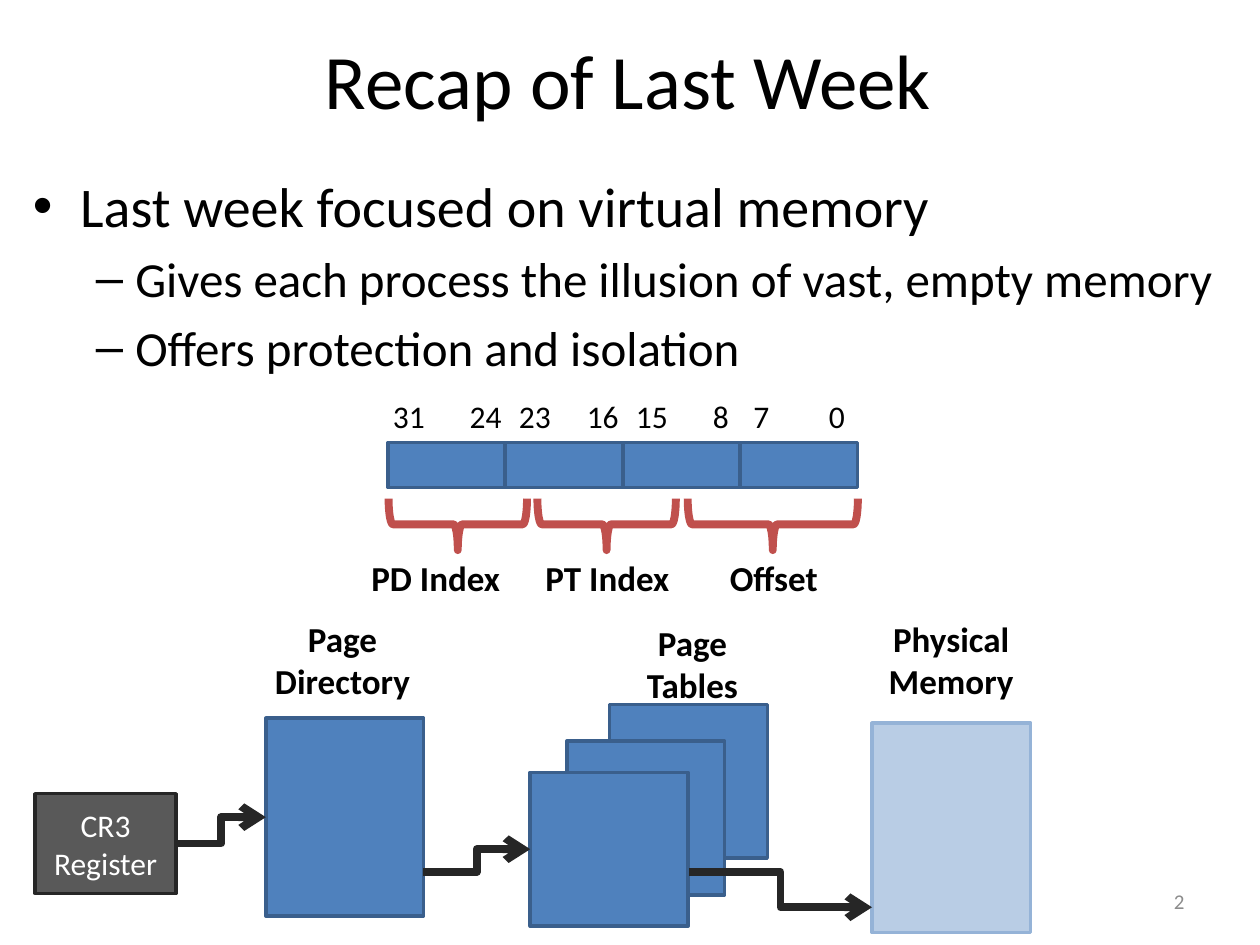
from lxml.etree import SubElement
from pptx import Presentation
from pptx.dml.color import RGBColor
from pptx.enum.shapes import MSO_CONNECTOR, MSO_SHAPE
from pptx.enum.text import MSO_ANCHOR, MSO_AUTO_SIZE, PP_ALIGN
from pptx.oxml.ns import qn
from pptx.util import Cm, Pt

color = RGBColor.from_string
BLUE, DARK_BLUE, CHARCOAL = "4F81BD", "3A5F8C", "262626"

deck = Presentation()
deck.slide_width, deck.slide_height = Cm(25.4), Cm(19.05)
slide = deck.slides.add_slide(deck.slide_layouts[1])
shapes = slide.shapes


def write(frame, lines, size, ink="000000", bold=False, align=PP_ALIGN.CENTER):
    """Put each line in its own paragraph."""
    for number, line in enumerate(lines):
        paragraph = frame.add_paragraph() if number else frame.paragraphs[0]
        paragraph.alignment = align
        run = paragraph.add_run()
        run.text = line
        run.font.name, run.font.size, run.font.bold = "Calibri", Pt(size), bold
        run.font.color.rgb = color(ink)


def add_block(kind, left, top, width, height, fill, line, weight=2):
    block = shapes.add_shape(kind, Cm(left), Cm(top), Cm(width), Cm(height))
    block.shadow.inherit = False
    if fill:
        block.fill.solid()
        block.fill.fore_color.rgb = color(fill)
    else:
        block.fill.background()
    block.line.color.rgb = color(line)
    block.line.width = Pt(weight)
    return block


# Title
title = shapes.title
title.left, title.top, title.width, title.height = Cm(0.13), Cm(0), Cm(25.07), Cm(3.18)
title.text_frame.vertical_anchor = MSO_ANCHOR.MIDDLE
write(title.text_frame, ["Recap of Last Week"], 44)

# Bullet list
recap = slide.placeholders[1]
recap.left, recap.top, recap.width, recap.height = Cm(0.41), Cm(3.33), Cm(24.46), Cm(5.28)
recap.text_frame.auto_size = MSO_AUTO_SIZE.NONE
points = [
    ("Last week focused on virtual memory", 0, 32),
    ("Gives each process the illusion of vast, empty memory", 1, 28),
    ("Offers protection and isolation", 1, 28),
]
for number, (point, level, size) in enumerate(points):
    paragraph = recap.text_frame.add_paragraph() if number else recap.text_frame.paragraphs[0]
    paragraph.level = level
    run = paragraph.add_run()
    run.text = point
    run.font.name, run.font.size = "Calibri", Pt(size)
    run.font.color.rgb = color("000000")

# Slide number
page_number = shapes.add_textbox(Cm(18.21), Cm(17.65), Cm(5.92), Cm(1.02))
page_number.text_frame.word_wrap = True
page_number.text_frame.vertical_anchor = MSO_ANCHOR.MIDDLE
write(page_number.text_frame, ["2"], 12, "8C8C8C", align=PP_ALIGN.RIGHT)

# Page directory, stacked page tables, physical memory and register
directory = add_block(MSO_SHAPE.RECTANGLE, 5.36, 14.48, 3.18, 3.99, BLUE, DARK_BLUE)
for left, top in [(12.29, 14.2), (11.43, 14.94), (10.69, 15.57)]:
    front_table = add_block(MSO_SHAPE.RECTANGLE, left, top, 3.18, 3.1, BLUE, DARK_BLUE)
add_block(MSO_SHAPE.RECTANGLE, 17.58, 14.58, 3.2, 4.22, "B9CDE5", "95B3D7")
register = add_block(MSO_SHAPE.FLOWCHART_PROCESS, 0.71, 16, 2.84, 2.01, "595959", CHARCOAL)
register.text_frame.vertical_anchor = MSO_ANCHOR.MIDDLE
write(register.text_frame, ["CR3", "Register"], 18, "FFFFFF")

# Arrows along the lookup path
RIGHT_SIDE, LEFT_SIDE = 3, 1
lookups = [
    (3.54, 17, 5.36, 16.48, register, directory),
    (8.53, 17.58, 10.69, 17.12, None, front_table),
    (13.89, 17.58, 17.58, 18.29, None, None),
]
for x1, y1, x2, y2, source, target in lookups:
    arrow = shapes.add_connector(MSO_CONNECTOR.ELBOW, Cm(x1), Cm(y1), Cm(x2), Cm(y2))
    if source:
        arrow.begin_connect(source, RIGHT_SIDE)
    if target:
        arrow.end_connect(target, LEFT_SIDE)
    arrow.line.color.rgb = color(CHARCOAL)
    arrow.line.width = Pt(4.5)
    SubElement(arrow.line._get_or_add_ln(), qn("a:tailEnd"), type="arrow")
    SubElement(arrow._element.spPr, qn("a:effectLst"))

# Four bytes of the virtual address
for byte in range(4):
    add_block(MSO_SHAPE.FLOWCHART_PROCESS, 7.82 + 2.37 * byte, 8.92, 2.36, 0.91, BLUE, DARK_BLUE)

# Bit numbers above the bytes
bit_lefts = {"31": 7.67, "24": 9.22, "23": 10.21, "16": 11.58,
             "15": 12.57, "8": 14.12, "7": 14.94, "0": 16.46}
for bit, left in bit_lefts.items():
    width = 1.17 if len(bit) == 2 else 0.84
    bit_label = shapes.add_textbox(Cm(left), Cm(7.87), Cm(width), Cm(1.02))
    bit_label.text_frame.word_wrap = False
    write(bit_label.text_frame, [bit], 18, align=PP_ALIGN.LEFT)

# Braces under the address fields, each turned to open upwards
BRACE_DEPTH, BRACE_MIDDLE = 1.04, 10.57
for center, span in [(9.23, 2.79), (12.23, 2.79), (15.58, 3.43)]:
    brace = add_block(MSO_SHAPE.LEFT_BRACE, center - BRACE_DEPTH / 2, BRACE_MIDDLE - span / 2,
                      BRACE_DEPTH, span, None, "C0504D", 4.5)
    brace.rotation = 270

# Bold labels for the address fields and the memory structures
labels = [
    (["PD Index"], 7.21, 11.1, 3.15, 1.12),
    (["PT Index"], 10.72, 11.1, 3.05, 1.12),
    (["Offset"], 14.43, 11.1, 2.34, 1.12),
    (["Page", "Directory"], 5.28, 12.32, 3.25, 1.96),
    (["Page", "Tables"], 12.78, 12.4, 2.36, 1.96),
    (["Physical", "Memory"], 17.65, 12.32, 3.05, 1.96),
]
for lines, left, top, width, height in labels:
    label = shapes.add_textbox(Cm(left), Cm(top), Cm(width), Cm(height))
    label.text_frame.word_wrap = False
    write(label.text_frame, lines, 20, bold=True)

deck.save("out.pptx")
